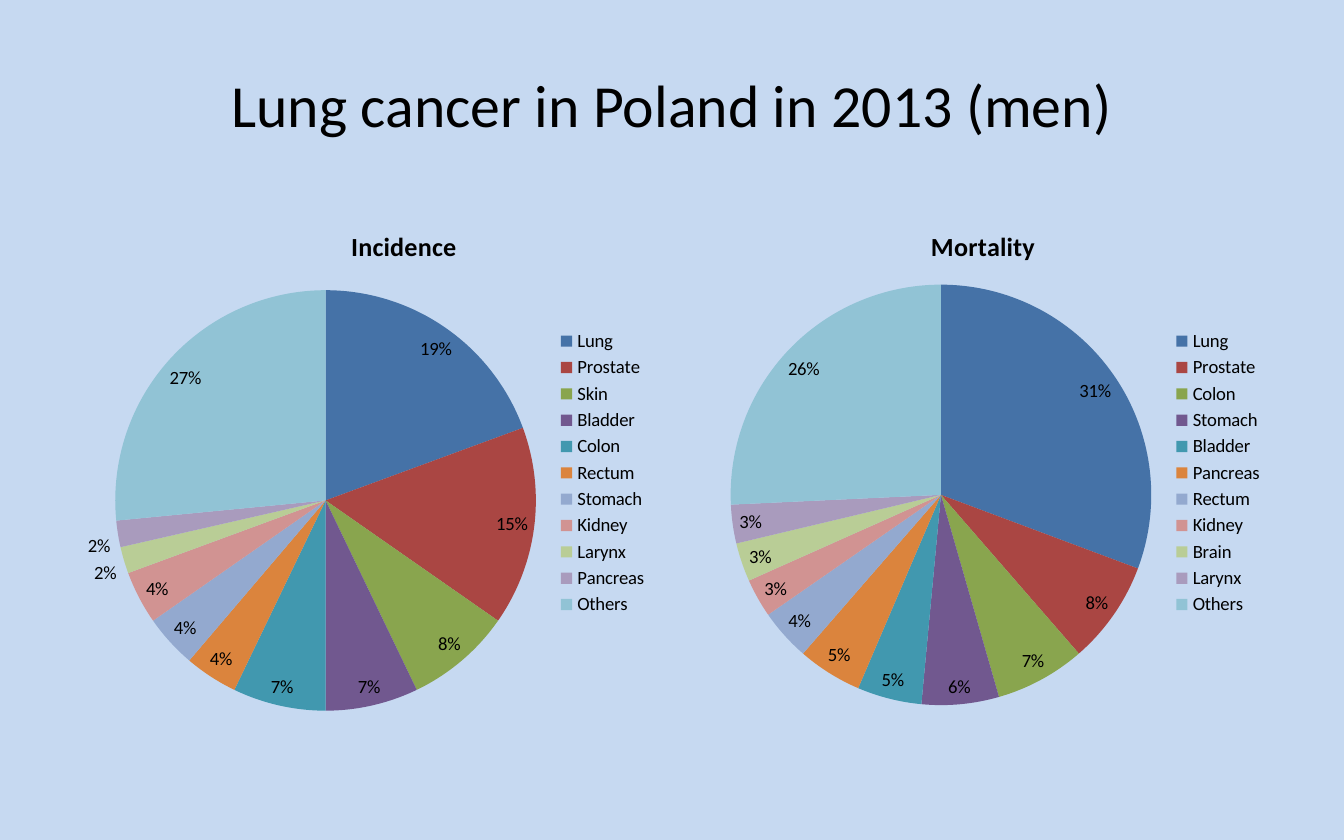
import pptx
import pptx.chart.data
import pptx.dml.color
import pptx.enum.chart
import pptx.enum.text
import pptx.oxml
import pptx.oxml.ns
import pptx.util

Cm, Pt = pptx.util.Cm, pptx.util.Pt

HEAD = "Lung cancer in Poland in 2013 (men)"
# Title and pie corners are fractions of the chart area.
PIES = [
    {
        "name": "Incidence", "title": (0.47, 0.05), "pie": (0.08, 0.17),
        "data": [("Lung", 19), ("Prostate", 15), ("Skin", 8), ("Bladder", 7),
                 ("Colon", 7), ("Rectum", 4), ("Stomach", 4), ("Kidney", 4),
                 ("Larynx", 2), ("Pancreas", 2), ("Others", 26)],
    },
    {
        "name": "Mortality", "title": (0.41, 0.05), "pie": (0.08, 0.16),
        "data": [("Lung", 31), ("Prostate", 8), ("Colon", 7), ("Stomach", 6),
                 ("Bladder", 5), ("Pancreas", 5), ("Rectum", 4), ("Kidney", 3),
                 ("Brain", 3), ("Larynx", 3), ("Others", 26)],
    },
]

THEME = {
    "font": "Calibri", "back": "C6D9F1", "ink": "000000",
    "head": 32, "title": 14, "text": 10,
    "slices": ["4572A7", "AA4643", "89A54E", "71588F", "4198AF", "DB843D",
               "93A9CF", "D19392", "B9CD96", "A99BBD", "91C3D5"],
}

WIDTH, HEIGHT, EDGE = Cm(25.4), Cm(15.88), Cm(1.27)
GAP = Cm(0.4)
PIE_W = (WIDTH - 2 * EDGE - GAP) // 2
PIE_TOP, PIE_H = Cm(3.71), Cm(10.46)
PIE_SIZE = (0.71, 0.76)


def tint(text):
    return pptx.dml.color.RGBColor.from_string(text)


def style(font, size, bold=False):
    font.name = THEME["font"]
    font.size = Pt(size)
    font.bold = bold
    font.color.rgb = tint(THEME["ink"])


def place(node, index, spot, size=()):
    """Give a chart part a manual layout, as its child number index."""
    for old in node.findall(pptx.oxml.ns.qn("c:layout")):
        node.remove(old)
    rows = [("xMode", "edge"), ("yMode", "edge")]
    rows += zip("xywh", (*spot, *size))
    if size:
        rows.insert(0, ("layoutTarget", "inner"))
    parts = "".join(f'<c:{tag} val="{val}"/>' for tag, val in rows)
    node.insert(index, pptx.oxml.parse_xml(
        f'<c:layout {pptx.oxml.ns.nsdecls("c")}>'
        f"<c:manualLayout>{parts}</c:manualLayout></c:layout>"))


def add_head(slide):
    box = slide.shapes.add_textbox(EDGE, Cm(0.64), WIDTH - 2 * EDGE, Cm(2.64))
    frame = box.text_frame
    frame.word_wrap = True
    frame.vertical_anchor = pptx.enum.text.MSO_ANCHOR.MIDDLE
    line = frame.paragraphs[0]
    line.alignment = pptx.enum.text.PP_ALIGN.CENTER
    run = line.add_run()
    run.text = HEAD
    style(run.font, THEME["head"])


def add_pie(slide, item, left):
    data = pptx.chart.data.CategoryChartData()
    data.categories = [name for name, _ in item["data"]]
    data.add_series("Series 1", [val for _, val in item["data"]])
    chart = slide.shapes.add_chart(
        pptx.enum.chart.XL_CHART_TYPE.PIE, left, PIE_TOP, PIE_W, PIE_H, data
    ).chart
    style(chart.font, THEME["text"])

    chart.has_title = True
    run = chart.chart_title.text_frame.paragraphs[0].add_run()
    run.text = item["name"]
    style(run.font, THEME["title"], bold=True)
    root = chart.element.chart
    place(root.find(pptx.oxml.ns.qn("c:title")), 1, item["title"])
    place(root.plotArea, 0, item["pie"], PIE_SIZE)

    chart.has_legend = True
    chart.legend.position = pptx.enum.chart.XL_LEGEND_POSITION.RIGHT
    chart.legend.include_in_layout = False
    style(chart.legend.font, THEME["text"])

    plot = chart.plots[0]
    plot.vary_by_categories = True
    for i, shade in enumerate(THEME["slices"]):
        fill = plot.series[0].points[i].format.fill
        fill.solid()
        fill.fore_color.rgb = tint(shade)

    plot.has_data_labels = True
    marks = plot.data_labels
    marks.show_value = False
    marks.show_percentage = True
    marks.number_format = "0%"
    marks.number_format_is_linked = False
    marks.position = pptx.enum.chart.XL_LABEL_POSITION.BEST_FIT
    style(marks.font, THEME["text"])


def main():
    deck = pptx.Presentation()
    deck.slide_width, deck.slide_height = WIDTH, HEIGHT
    slide = deck.slides.add_slide(deck.slide_layouts[6])
    slide.background.fill.solid()
    slide.background.fill.fore_color.rgb = tint(THEME["back"])
    add_head(slide)
    for i, item in enumerate(PIES):
        add_pie(slide, item, EDGE + i * (PIE_W + GAP))
    deck.save("out.pptx")


if __name__ == "__main__":
    main()
